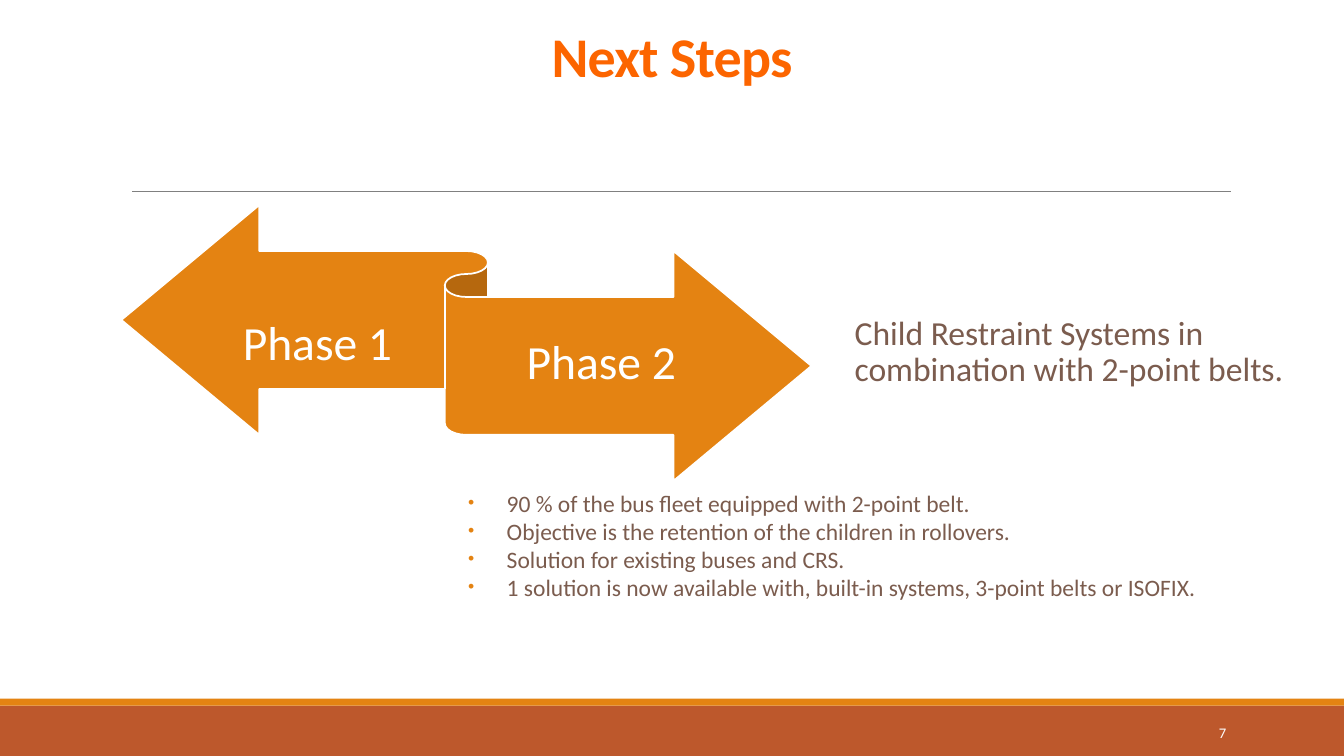
"""Build the Next Steps slide with its two-phase ribbon."""
from lxml.etree import SubElement
from pptx import Presentation
from pptx.dml.color import RGBColor
from pptx.enum.shapes import MSO_CONNECTOR, MSO_SHAPE
from pptx.enum.text import MSO_ANCHOR, PP_ALIGN
from pptx.oxml.ns import qn
from pptx.util import Pt

TITLE = "Next Steps"
PHASES = [("Phase 1", (145.5, 198.5, 162.5, 96.5)), ("Phase 2", (333.5, 211.5, 192, 96.5))]
SUMMARY = "Child Restraint Systems in combination with 2-point belts."
POINTS = [
    "90 % of the bus fleet equipped with 2-point belt.",
    "Objective is the retention of the children in rollovers.",
    "Solution for existing buses and CRS.",
    "1 solution is now available with, built-in systems, 3-point belts or ISOFIX.",
]
PAGE = "7"

WIDTH, HEIGHT = 960, 540
FOOTER, STRIPE = 36, 5
ORANGE, RUST, WHITE, BROWN = "E48312", "BD582C", "FFFFFF", "7B5C4E"
TITLE_ORANGE, GREY = "FC6500", "808080"
INDENT = 27.5


def paint(color_format, color):
    color_format.rgb = RGBColor.from_string(color)


def add_filled(slide, preset, box, color, outline=None):
    shape = slide.shapes.add_shape(preset, *map(Pt, box))
    shape.shadow.inherit = False
    shape.fill.solid()
    paint(shape.fill.fore_color, color)
    if outline:
        paint(shape.line.color, outline)
        shape.line.width = Pt(1.25)
    else:
        shape.line.fill.background()


def add_text(slide, lines, box, size, color, align=PP_ALIGN.LEFT, anchor=MSO_ANCHOR.MIDDLE,
             spacing=1.0, gaps=(0, 0), inset=0, bold=False):
    frame = slide.shapes.add_textbox(*map(Pt, box)).text_frame
    frame.word_wrap = True
    frame.vertical_anchor = anchor
    frame.margin_left = frame.margin_right = Pt(inset)
    for index, line in enumerate(lines):
        paragraph = frame.add_paragraph() if index else frame.paragraphs[0]
        paragraph.alignment = align
        paragraph.line_spacing = spacing
        paragraph.space_before, paragraph.space_after = map(Pt, gaps)
        run = paragraph.add_run()
        run.text = line
        run.font.name = "Calibri"
        run.font.size = Pt(size)
        run.font.bold = bold
        paint(run.font.color, color)
    return frame


def add_bullet(paragraph):
    properties = paragraph._p.get_or_add_pPr()
    properties.set("marL", str(Pt(INDENT)))
    properties.set("indent", str(-Pt(INDENT)))
    SubElement(SubElement(properties, qn("a:buClr")), qn("a:srgbClr"), val=ORANGE)
    SubElement(properties, qn("a:buSzPct"), val="75000")
    SubElement(properties, qn("a:buFont"), typeface="Arial")
    SubElement(properties, qn("a:buChar"), char="•")


def main():
    deck = Presentation()
    deck.slide_width, deck.slide_height = Pt(WIDTH), Pt(HEIGHT)
    slide = deck.slides.add_slide(deck.slide_layouts[6])

    footer_top = HEIGHT - FOOTER
    add_filled(slide, MSO_SHAPE.RECTANGLE, (0, footer_top, WIDTH, FOOTER), RUST)
    add_filled(slide, MSO_SHAPE.RECTANGLE, (0, footer_top - STRIPE, WIDTH, STRIPE), ORANGE)

    rule = slide.shapes.add_connector(MSO_CONNECTOR.STRAIGHT, Pt(94.5), Pt(136.8), Pt(879), Pt(136.8))
    paint(rule.line.color, GREY)
    rule.line.width = Pt(0.5)
    SubElement(rule._element.spPr, qn("a:effectLst"))

    add_text(slide, [PAGE], (780, 508.5, 103, 29), 10.5, WHITE, PP_ALIGN.RIGHT, inset=7.2)
    title = add_text(slide, [TITLE], (120, 3.6, 720, 79.2), 40, TITLE_ORANGE, PP_ALIGN.CENTER,
                     spacing=0.85, inset=7.2, bold=True)
    title.paragraphs[0].runs[0].font._element.set("spc", "-50")

    add_filled(slide, MSO_SHAPE.LEFT_RIGHT_RIBBON, (86.7, 146.5, 492.9, 197), ORANGE, WHITE)
    for phase, box in PHASES:
        add_text(slide, [phase], box, 34, WHITE, PP_ALIGN.CENTER, spacing=0.9)

    points = add_text(slide, POINTS, (334.5, 351, 551.5, 98), 16.8, BROWN,
                      anchor=MSO_ANCHOR.TOP, spacing=0.7, gaps=(2, 4))
    for paragraph in points.paragraphs:
        add_bullet(paragraph)
    add_text(slide, [SUMMARY], (610.5, 222.5, 329, 65.5), 24, BROWN,
             anchor=MSO_ANCHOR.TOP, spacing=0.9, gaps=(2, 4))

    deck.save("out.pptx")


if __name__ == "__main__":
    main()
